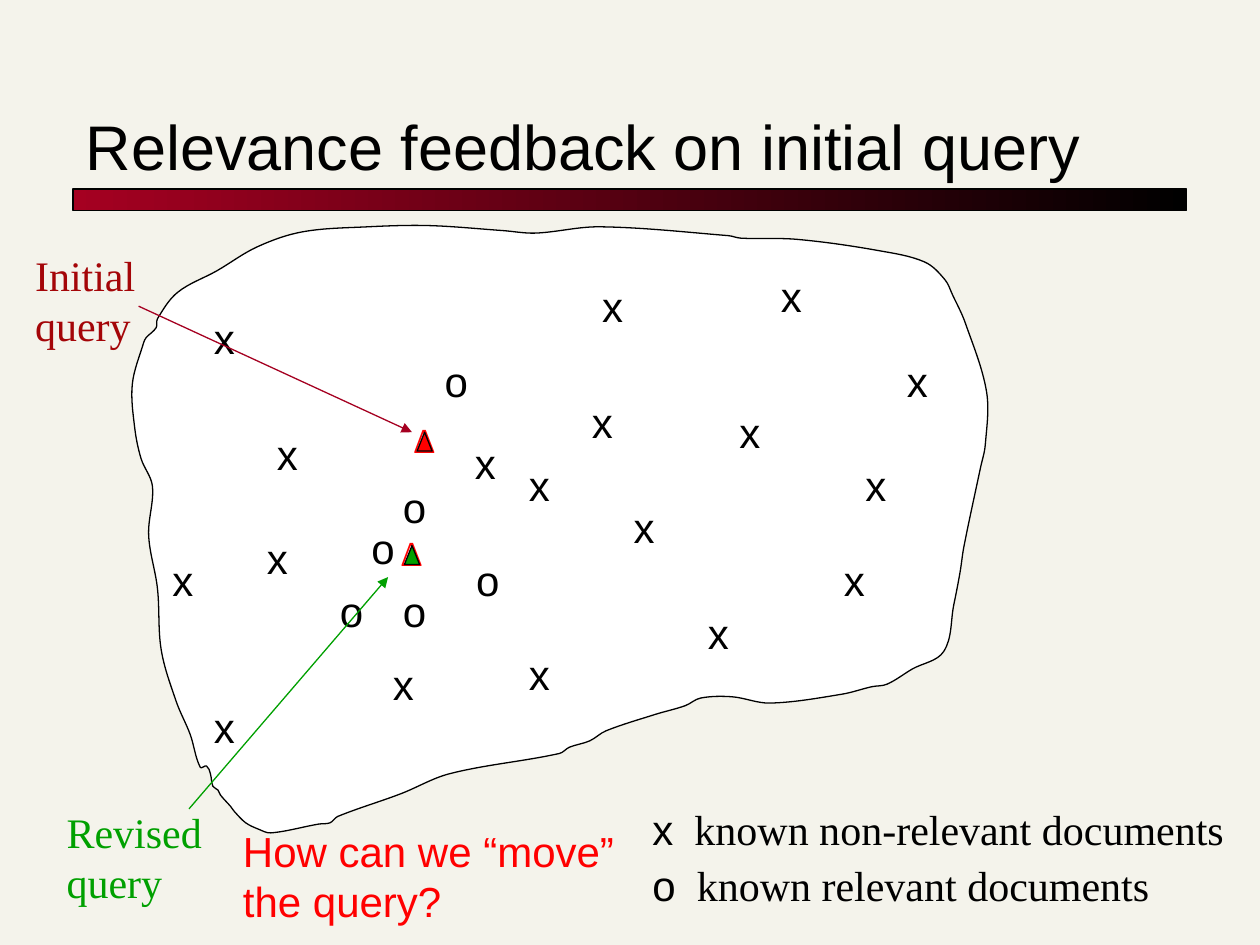
from math import hypot

from lxml import etree
from pptx import Presentation
from pptx.dml.color import RGBColor
from pptx.enum import shapes, text
from pptx.oxml.ns import qn
from pptx.util import Inches, Pt

THEME = {
    "background": "F4F3EB", "ink": "000000", "paper": "FFFFFF", "bar": "A50021",
    "initial": "A40508", "revised": "00A000", "alert": "FF0000",
    "sans": "Arial", "serif": "Times New Roman",
    "title": 36, "body": 24, "delta": 20, "line": 0.75,
}

# Content
TITLE = "Relevance feedback on initial query"
# Left and top of each document mark
MARKS = {
    "x": (0.33, [(4.1, 3.6), (4.6, 3.1), (4.93, 3.93), (2.02, 4.18), (3.67, 3.42),
                 (4.68, 2.18), (2.1, 3.35), (5.77, 3.18), (1.6, 2.43), (6.1, 2.1),
                 (1.6, 5.52), (1.27, 4.35), (4.1, 5.1), (3.02, 5.18), (6.77, 3.6),
                 (5.52, 4.77), (6.6, 4.35), (7.1, 2.77)]),
    "o": (0.67, [(2.6, 4.6), (3.68, 4.35), (3.1, 4.6), (2.85, 4.1), (3.43, 2.77),
                 (3.1, 3.77)]),
}
LEGEND = [("x", "known non-relevant documents"), ("o", "known relevant documents")]
# Words, box, font, colour
CAPTIONS = [
    ("Revised query", (0.43, 6.35, 1.92, 0.9), "serif", "revised"),
    ("Initial query", (0.18, 1.93, 1.25, 0.9), "serif", "initial"),
    ("How can we “move” the query?", (1.83, 6.5, 3.17, 0.91), "sans", "alert"),
]
# Start, end, colour
ARROWS = [((1.5, 6.42), (3.08, 4.58), "revised"), ((1.1, 2.43), (3.27, 3.43), "bar")]
# Left and top of each query marker, fill
QUERIES = [((3.08, 4.17), "revised"), ((3.18, 3.27), "alert")]
DOCUMENT_SPACE = [
    (1.59, 6.09), (1.51, 5.83), (1.4, 5.57), (1.28, 5.16), (1.25, 4.67), (1.18, 4.25),
    (1.21, 3.86), (1.12, 3.64), (1.07, 3.4), (1.05, 3.05), (1.14, 2.72), (1.16, 2.68),
    (1.24, 2.6), (1.25, 2.53), (1.41, 2.32), (1.72, 2.15), (2.04, 1.96), (2.4, 1.84),
    (2.92, 1.8), (3.4, 1.79), (3.99, 1.83), (4.25, 1.85), (4.76, 1.8), (5.78, 1.87),
    (5.88, 1.89), (6.33, 1.9), (6.98, 1.99), (7.34, 2.08), (7.5, 2.22), (7.56, 2.34),
    (7.66, 2.56), (7.83, 3.11), (7.82, 3.53), (7.78, 3.72), (7.65, 4.34), (7.62, 4.54),
    (7.57, 4.8), (7.49, 5.17), (7.24, 5.31), (7.04, 5.43), (6.92, 5.45), (6.68, 5.51),
    (6.11, 5.58), (5.81, 5.53), (5.56, 5.54), (5.44, 5.6), (5.2, 5.67), (4.81, 5.8),
    (4.68, 5.88), (4.52, 5.93), (4.44, 5.98), (3.57, 6.14), (3.18, 6.3), (2.68, 6.48),
    (2.62, 6.53), (2.53, 6.54), (2.15, 6.61), (2.05, 6.58), (1.95, 6.53), (1.86, 6.44),
    (1.83, 6.4), (1.75, 6.31), (1.73, 6.27), (1.69, 6.24), (1.67, 6.14), (1.64, 6.08),
]


def color(name):
    return RGBColor.from_string(THEME[name])


def style_shape(shape, fill):
    shape.shadow.inherit = False
    shape.fill.solid()
    shape.fill.fore_color.rgb = color(fill)
    shape.line.color.rgb = color("ink")
    shape.line.width = Pt(THEME["line"])


def add_run(paragraph, words, font="sans", ink="ink", size="body"):
    run = paragraph.add_run()
    run.text = words
    run.font.name = THEME[font]
    run.font.size = Pt(THEME[size])
    run.font.color.rgb = color(ink)


def add_text_box(parent, box):
    frame = parent.add_textbox(*map(Inches, box)).text_frame
    frame.word_wrap = True
    frame.auto_size = text.MSO_AUTO_SIZE.SHAPE_TO_FIT_TEXT
    return frame


def add_outline(parent, points, fill):
    start, *rest = [(Inches(x), Inches(y)) for x, y in points]
    builder = parent.build_freeform(*start)
    builder.add_line_segments(rest, close=True)
    shape = builder.convert_to_shape()
    style_shape(shape, fill)
    return shape


def smooth(shape):
    """Turn the straight segments of a closed outline into smooth curves."""
    outline = next(shape._element.iter(qn("a:path")))
    points = [(int(p.get("x")), int(p.get("y"))) for p in outline.iter(qn("a:pt"))]
    count = len(points)

    def handle(index, length):
        (x0, y0), (x1, y1) = points[index - 1], points[(index + 1) % count]
        scale = length / 3 / hypot(x1 - x0, y1 - y0)
        return (x1 - x0) * scale, (y1 - y0) * scale

    for segment in outline.findall(qn("a:lnTo")):
        outline.remove(segment)
    close = outline.find(qn("a:close"))
    for i, (x0, y0) in enumerate(points):
        j = (i + 1) % count
        x1, y1 = points[j]
        length = hypot(x1 - x0, y1 - y0)
        (ax, ay), (bx, by) = handle(i, length), handle(j, length)
        curve = etree.Element(qn("a:cubicBezTo"))
        for x, y in [(x0 + ax, y0 + ay), (x1 - bx, y1 - by), (x1, y1)]:
            etree.SubElement(curve, qn("a:pt"), x=str(round(x)), y=str(round(y)))
        close.addprevious(curve)


def add_arrow(slide, start, end, ink):
    arrow = slide.shapes.add_connector(
        shapes.MSO_CONNECTOR.STRAIGHT, *map(Inches, start + end))
    arrow.line.color.rgb = color(ink)
    arrow.line.width = Pt(THEME["line"])
    etree.SubElement(arrow.line._get_or_add_ln(), qn("a:tailEnd"), type="triangle")
    etree.SubElement(arrow._element.spPr, qn("a:effectLst"))


def add_query(slide, left, top, fill):
    group = slide.shapes.add_group_shape().shapes
    frame = add_text_box(group, (left, top, 0.5, 0.43))
    add_run(frame.paragraphs[0], "Δ", "serif", "alert", "delta")
    x, y = left + 0.13, top + 0.16
    add_outline(group, [(x, y + 0.15), (x + 0.06, y), (x + 0.12, y + 0.15)], fill)


def main():
    presentation = Presentation()
    presentation.slide_width, presentation.slide_height = Inches(10), Inches(7.5)
    slide = presentation.slides.add_slide(presentation.slide_layouts[5])
    slide.background.fill.solid()
    slide.background.fill.fore_color.rgb = color("background")

    # Title
    title = slide.shapes.title
    title.left, title.top, title.width, title.height = map(
        Inches, (0.58, 0.42, 8.83, 1.08))
    title.text_frame.vertical_anchor = text.MSO_ANCHOR.BOTTOM
    paragraph = title.text_frame.paragraphs[0]
    paragraph.alignment = text.PP_ALIGN.LEFT
    add_run(paragraph, TITLE, size="title")

    # Gradient bar below the title
    bar = slide.shapes.add_shape(
        shapes.MSO_SHAPE.RECTANGLE, *map(Inches, (0.58, 1.5, 8.84, 0.17)))
    style_shape(bar, "bar")
    bar.fill.gradient()
    bar.fill.gradient_angle = 0
    for stop, name, position in zip(bar.fill.gradient_stops, ("bar", "ink"), (0, 1)):
        stop.color.rgb = color(name)
        stop.position = position

    # Document space and its marks
    smooth(add_outline(slide.shapes, DOCUMENT_SPACE, "paper"))
    for mark, (width, places) in MARKS.items():
        for left, top in places:
            frame = add_text_box(slide.shapes, (left, top, width, 0.5))
            add_run(frame.paragraphs[0], mark)

    # Queries, arrows and captions
    for place, fill in QUERIES:
        add_query(slide, *place, fill)
    for start, end, ink in ARROWS:
        add_arrow(slide, start, end, ink)
    for words, box, font, ink in CAPTIONS:
        add_run(add_text_box(slide.shapes, box).paragraphs[0], words, font, ink)

    # Legend
    frame = add_text_box(slide.shapes, (5.08, 6.33, 4.92, 0.94))
    for index, (mark, meaning) in enumerate(LEGEND):
        paragraph = frame.add_paragraph() if index else frame.paragraphs[0]
        paragraph.space_before = Pt(3 * index)
        add_run(paragraph, mark)
        add_run(paragraph, "  " + meaning, "serif")

    presentation.save("out.pptx")


if __name__ == "__main__":
    main()
